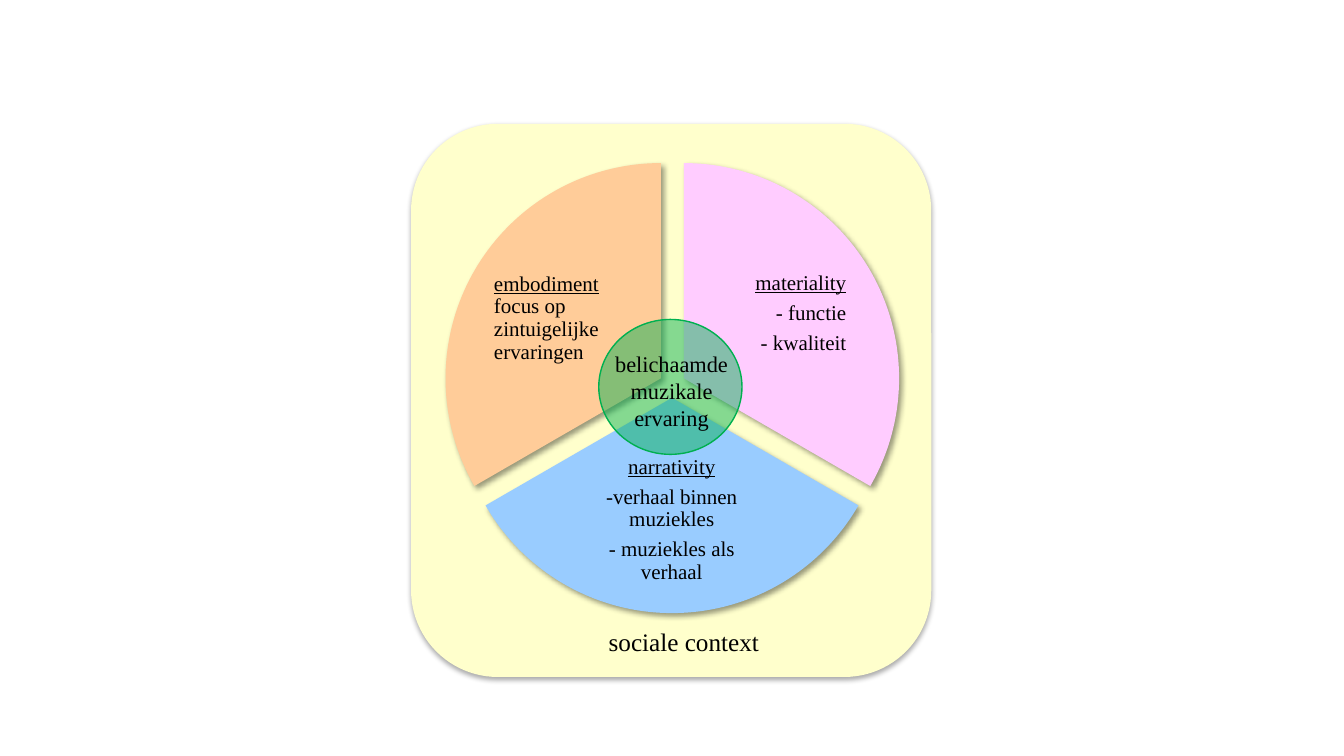
"""Build a slide showing three wedges of embodied musical experience in their social context."""
from typing import NamedTuple

from lxml.etree import SubElement
from pptx import Presentation
from pptx.dml.color import RGBColor
from pptx.enum.shapes import MSO_SHAPE
from pptx.enum.text import MSO_ANCHOR, MSO_AUTO_SIZE, PP_ALIGN
from pptx.oxml.ns import qn
from pptx.util import Cm, Pt

FONT = "Times New Roman"
WEDGE_DIAMETER = 10.85


class Box(NamedTuple):
    left: float
    top: float
    width: float
    height: float

    def lengths(self) -> list:
        return [Cm(value) for value in self]


class Shadow(NamedTuple):
    opacity: int
    blur: float
    distance: float
    angle: int


class Run(NamedTuple):
    text: str
    underline: bool = False


class Wedge(NamedTuple):
    left: float
    top: float
    start: int
    end: int
    fill: str
    label: Box
    align: PP_ALIGN
    paragraphs: list[list[Run]]


CONTEXT_SHADOW = Shadow(32, 3.5, 2.2, 90)
WEDGE_SHADOW = Shadow(40, 4, 3, 45)

WEDGES = [
    Wedge(11.81, 4.11, 270, 30, "FFCCFF", Box(17.7, 6.1, 3.68, 3.61), PP_ALIGN.RIGHT,
          [[Run("materiality", True)], [Run("- functie")], [Run("- kwaliteit")]]),
    Wedge(11.51, 4.6, 30, 150, "99CCFF", Box(14.48, 11.43, 4.9, 3.35), PP_ALIGN.CENTER,
          [[Run("narrativity", True)], [Run("-verhaal binnen muziekles")],
           [Run("- muziekles als verhaal")]]),
    Wedge(11.23, 4.11, 150, 270, "FFCC99", Box(12.4, 6.22, 3.68, 3.61), PP_ALIGN.LEFT,
          [[Run("embodiment", True), Run(" focus op zintuigelijke ervaringen")]]),
]


def color(value: str) -> RGBColor:
    return RGBColor.from_string(value)


def add_shadow(shape, shadow: Shadow) -> None:
    effects = shape._element.spPr.find(qn("a:effectLst"))
    outer = SubElement(effects, qn("a:outerShdw"), blurRad=str(Pt(shadow.blur)),
                       dist=str(Pt(shadow.distance)), dir=str(shadow.angle * 60000),
                       algn="ctr", rotWithShape="0")
    black = SubElement(outer, qn("a:srgbClr"), val="000000")
    SubElement(black, qn("a:alpha"), val=str(shadow.opacity * 1000))


def add_area(shapes, kind: MSO_SHAPE, box: Box, fill: str, shadow: Shadow | None = None):
    area = shapes.add_shape(kind, *box.lengths())
    area.shadow.inherit = False
    area.fill.solid()
    area.fill.fore_color.rgb = color(fill)
    area.line.fill.background()
    if shadow:
        add_shadow(area, shadow)
    return area


def add_text(shapes, box: Box, paragraphs: list[list[Run]], *, size: float,
             align: PP_ALIGN = PP_ALIGN.LEFT, anchor: MSO_ANCHOR = MSO_ANCHOR.TOP,
             inset: float | None = None, line_spacing: float | None = None,
             space_after: float = 0, grow: bool = False) -> None:
    frame = shapes.add_textbox(*box.lengths()).text_frame
    frame.word_wrap = True
    frame.vertical_anchor = anchor
    frame.auto_size = MSO_AUTO_SIZE.SHAPE_TO_FIT_TEXT if grow else MSO_AUTO_SIZE.NONE
    if inset is not None:
        frame.margin_left = frame.margin_right = Cm(inset)
        frame.margin_top = frame.margin_bottom = Cm(inset)
    for index, runs in enumerate(paragraphs):
        paragraph = frame.add_paragraph() if index else frame.paragraphs[0]
        paragraph.alignment = align
        paragraph.line_spacing = line_spacing
        paragraph.space_after = Pt(space_after)
        for part in runs:
            run = paragraph.add_run()
            run.text = part.text
            run.font.name = FONT
            run.font.size = Pt(size)
            run.font.underline = part.underline
            run.font.color.rgb = color("000000")


def add_wedge(shapes, wedge: Wedge) -> None:
    box = Box(wedge.left, wedge.top, WEDGE_DIAMETER, WEDGE_DIAMETER)
    slice_ = add_area(shapes, MSO_SHAPE.PIE, box, wedge.fill, WEDGE_SHADOW)
    slice_.adjustments[0] = wedge.start * 0.6
    slice_.adjustments[1] = wedge.end * 0.6
    add_text(shapes, wedge.label, wedge.paragraphs, size=15, align=wedge.align,
             anchor=MSO_ANCHOR.MIDDLE, inset=0.05, line_spacing=0.9, space_after=5.25)


def add_core(shapes) -> None:
    core = add_area(shapes, MSO_SHAPE.OVAL, Box(15.09, 8.05, 3.61, 3.4), "00B050")
    tint = core._element.spPr.find(qn("a:solidFill"))[0]
    SubElement(tint, qn("a:alpha"), val="48000")
    core.line.color.rgb = color("00B050")
    core.line.width = Pt(1)
    add_text(shapes, Box(15.21, 8.71, 3.43, 2.31), [[Run("belichaamde muzikale ervaring")]],
             size=16, align=PP_ALIGN.CENTER, grow=True)


def main() -> None:
    deck = Presentation()
    deck.slide_width, deck.slide_height = Cm(33.87), Cm(19.05)
    shapes = deck.slides.add_slide(deck.slide_layouts[6]).shapes
    add_area(shapes, MSO_SHAPE.ROUNDED_RECTANGLE, Box(10.36, 3.12, 13.11, 13.94),
             "FFFFCC", CONTEXT_SHADOW)
    circle = shapes.add_group_shape().shapes
    for wedge in WEDGES:
        add_wedge(circle, wedge)
    add_core(shapes)
    add_text(shapes, Box(15.09, 15.65, 4.34, 1.8), [[Run("sociale context")]],
             size=18, grow=True)
    deck.save("out.pptx")


if __name__ == "__main__":
    main()
